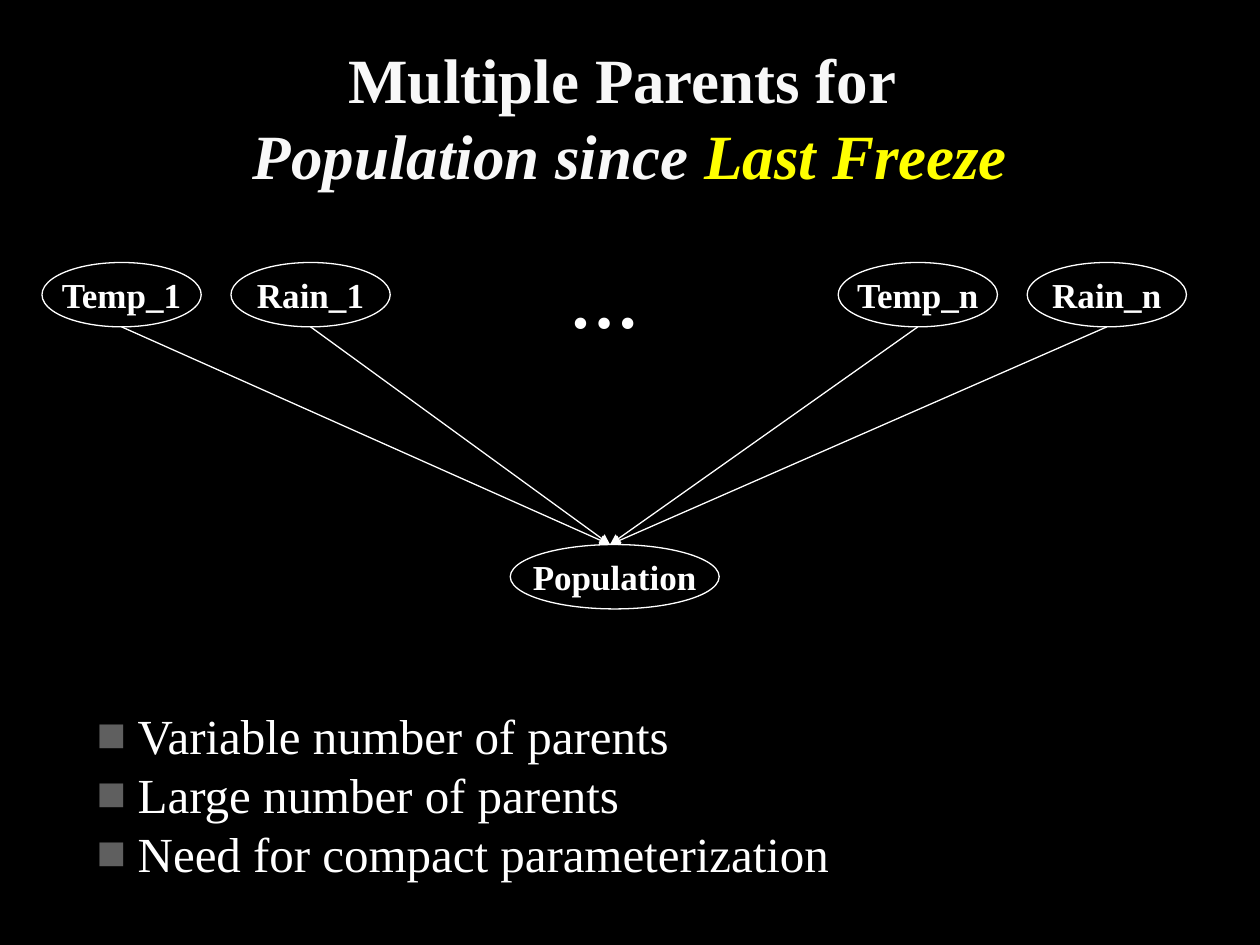
from lxml.etree import SubElement as Sub
from pptx import Presentation
from pptx.dml.color import RGBColor as Rgb
from pptx.enum.shapes import MSO_CONNECTOR as Conn, MSO_SHAPE as Kind
from pptx.enum.text import MSO_ANCHOR as Anchor, MSO_AUTO_SIZE as Fit, PP_ALIGN as Align
from pptx.oxml.ns import qn
from pptx.util import Pt

HUES = {"back": "000000", "ink": "FFFFFF", "head": "F8F8F8",
        "mark": "FFFF00", "dot": "5F5F5F"}
FONT = "Times New Roman"


def hue(name):
    """Return a named colour."""
    return Rgb.from_string(HUES[name])


def place(shape, box):
    """Move a shape to a box of left, top, width and height."""
    shape.left, shape.top, shape.width, shape.height = map(Pt, box)


def write(para, text, size=28, color="ink", bold=False, italic=False):
    """Add a formatted run to a paragraph."""
    run = para.add_run()
    run.text = text
    font = run.font
    font.name, font.size = FONT, Pt(size)
    font.bold, font.italic = bold, italic
    font.color.rgb = hue(color)


def setup(frame, wrap=True, anchor=Anchor.TOP):
    """Set wrapping and anchor, and return the first paragraph."""
    frame.word_wrap = wrap
    frame.auto_size = Fit.NONE
    frame.vertical_anchor = anchor
    return frame.paragraphs[0]


def title(slide, box):
    """Fill the title with its two lines."""
    shape = slide.shapes.title
    place(shape, box)
    para = setup(shape.text_frame, anchor=Anchor.MIDDLE)
    para.alignment = Align.CENTER
    write(para, "Multiple Parents for ", 36, "head", True)
    para.add_line_break()
    write(para, "Population since ", 36, "head", True, True)
    write(para, "Last Freeze", 36, "mark", True, True)


def node(slide, text, box):
    """Draw one labelled oval."""
    oval = slide.shapes.add_shape(Kind.OVAL, *map(Pt, box))
    oval.shadow.inherit = False
    oval.fill.background()
    oval.line.color.rgb = hue("ink")
    oval.line.width = Pt(0.75)
    para = setup(oval.text_frame, False, Anchor.MIDDLE)
    para.alignment = Align.CENTER
    write(para, text, 20, bold=True)


def arrow(slide, start, end):
    """Draw a thin arrow between two points."""
    line = slide.shapes.add_connector(Conn.STRAIGHT, *map(Pt, start + end))
    line.line.color.rgb = hue("ink")
    line.line.width = Pt(0.75)
    props = line._element.spPr
    Sub(props.get_or_add_ln(), qn("a:tailEnd"), type="triangle")
    Sub(props, qn("a:effectLst"))


def graph(slide, box):
    """Draw the parents, their child and the arrows between."""
    left, top, width, height = box
    wide, tall, step, child = 91, 36.8, 108, 119.4
    tip = (left + 324.6, top + height - tall)
    node(slide, "Population", (left + 267.6, tip[1], child, tall))
    far = left + width - step - wide
    for base, tag in ((left, "1"), (far, "n")):
        for col, name in enumerate(("Temp", "Rain")):
            x = base + col * step
            node(slide, f"{name}_{tag}", (x, top, wide, tall))
            arrow(slide, (x + wide / 2, top + tall), tip)
    dots = slide.shapes.add_textbox(*map(Pt, (left + 294.4, top - 6, 54.7, 55.4)))
    write(setup(dots.text_frame, False), "…", 40, bold=True)


def points(slide, box):
    """Fill the body with square bullets."""
    body = slide.placeholders[1]
    place(body, box)
    frame = body.text_frame
    para = setup(frame)
    texts = ("Variable number of parents", "Large number of parents",
             "Need for compact parameterization")
    for row, text in enumerate(texts):
        para = frame.add_paragraph() if row else para
        para.space_before = Pt(0)
        props = para._p.get_or_add_pPr()
        props.set("marL", str(Pt(23.5)))
        props.set("indent", str(Pt(-23.5)))
        Sub(Sub(props, qn("a:buClr")), qn("a:srgbClr"), val=HUES["dot"])
        Sub(props, qn("a:buFont"), typeface=FONT)
        Sub(props, qn("a:buChar"), char="■")
        write(para, text)


def main():
    """Build and save the slide."""
    deck = Presentation()
    deck.slide_width, deck.slide_height = Pt(720), Pt(540)
    slide = deck.slides.add_slide(deck.slide_layouts[1])
    fill = slide.background.fill
    fill.solid()
    fill.fore_color.rgb = hue("back")
    title(slide, (36, 21.6, 648, 90))
    graph(slide, (24, 150, 654, 198))
    points(slide, (48, 399.6, 516, 108))
    deck.save("out.pptx")


if __name__ == "__main__":
    main()
